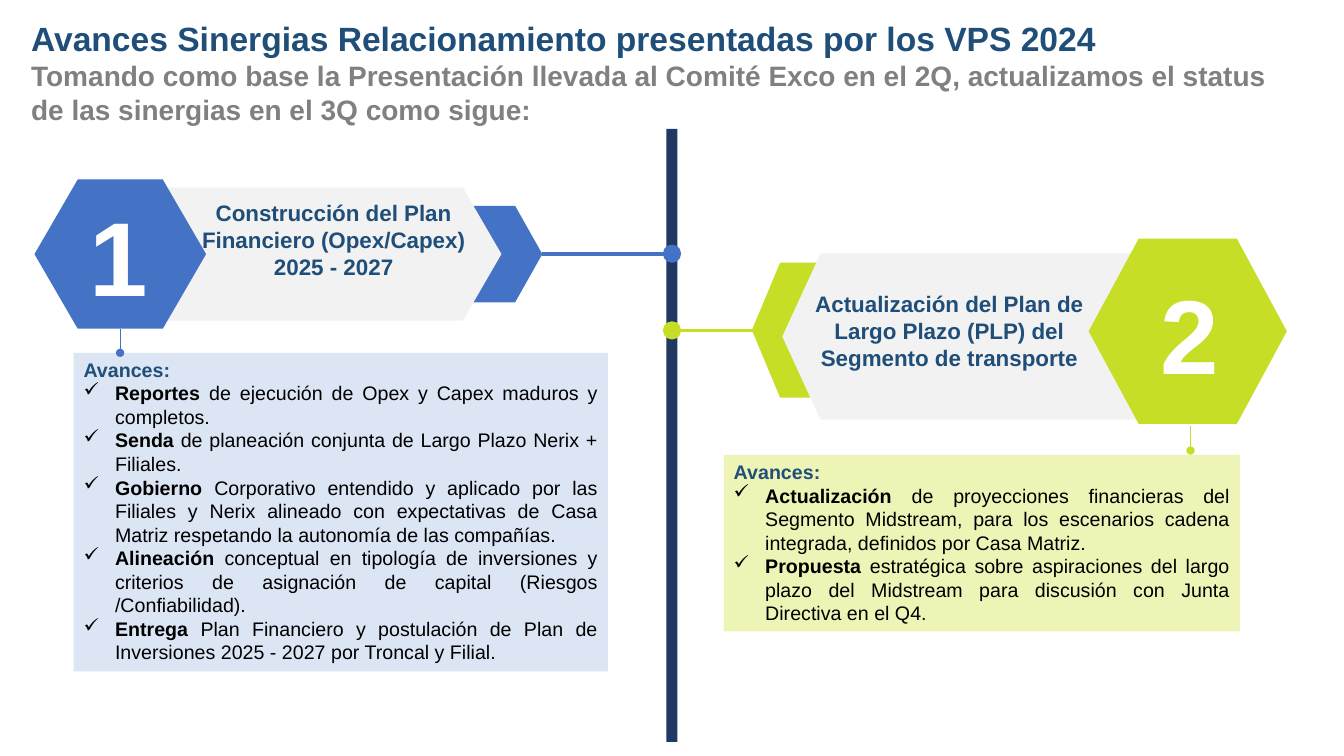
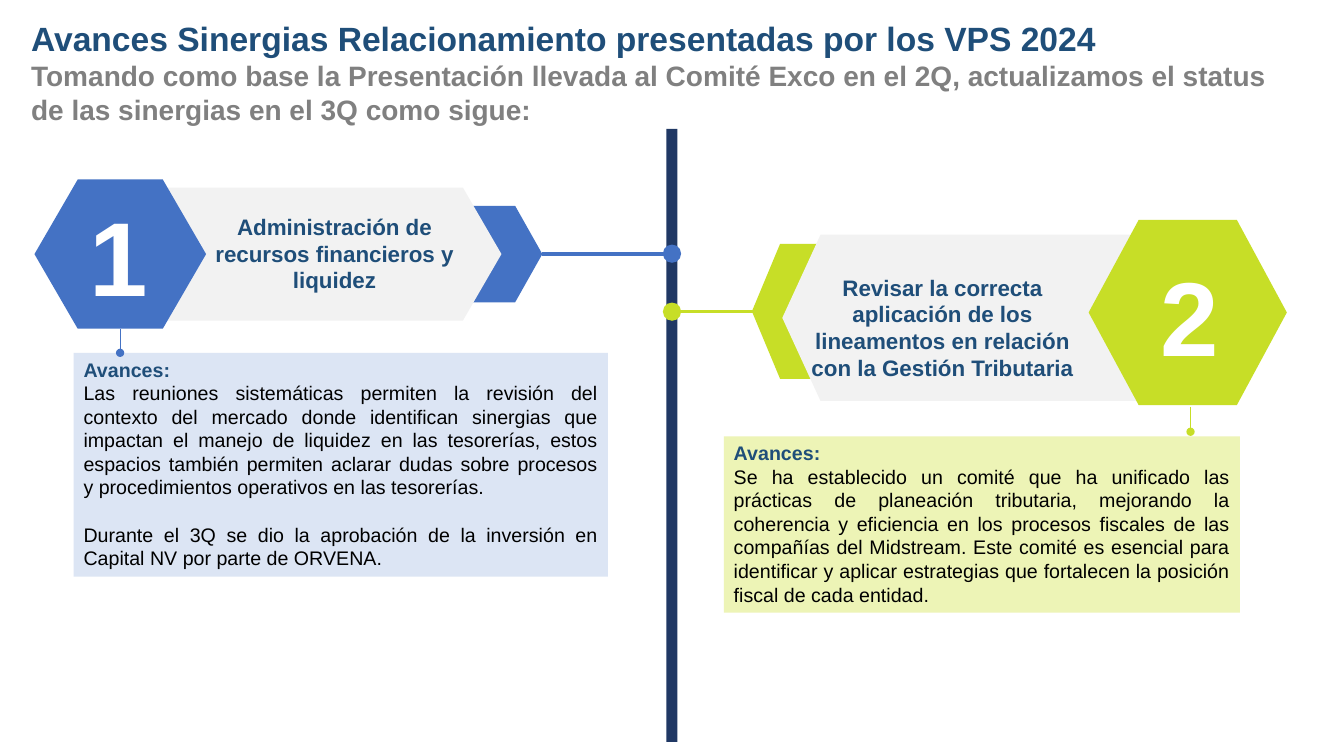
from lxml import etree
from pptx import Presentation
from pptx.dml.color import RGBColor
from pptx.enum import shapes, text
from pptx.oxml.ns import qn
from pptx.util import Pt

BLUE = RGBColor(0x44, 0x72, 0xC4)
LIME = RGBColor(0xC7, 0xDE, 0x27)
PALE_BLUE = RGBColor(0xDC, 0xE5, 0xF4)
PALE_LIME = RGBColor(0xED, 0xF4, 0xB6)
NAVY = RGBColor(0x20, 0x38, 0x64)
INK = RGBColor(0x1F, 0x4E, 0x79)
GREY = RGBColor(0x80, 0x80, 0x80)
LIGHT = RGBColor(0xF2, 0xF2, 0xF2)
WHITE = RGBColor(0xFF, 0xFF, 0xFF)
BLACK = RGBColor(0, 0, 0)

KIND = shapes.MSO_SHAPE
MID = 480
INDENT = 22.5
TITLE = "Avances Sinergias Relacionamiento presentadas por los VPS 2024"
LEAD = ("Tomando como base la Presentación llevada al Comité Exco en el 2Q, "
        "actualizamos el status de las sinergias en el 3Q como sigue:")

STYLES = {
    "title": dict(size=Pt(24), bold=True, color=INK),
    "lead": dict(size=Pt(20), bold=True, color=GREY),
    "number": dict(size=Pt(75), bold=True, color=WHITE),
    "head": dict(size=Pt(16), bold=True, color=INK),
    "label": dict(size=Pt(14), bold=True, color=INK),
    "strong": dict(size=Pt(14), bold=True, color=BLACK),
    "body": dict(size=Pt(14), bold=False, color=BLACK),
}

# Geometry of each side: boxes are left, top, width, height.
LEFT = dict(
    color=BLUE, pale=PALE_BLUE, number="1",
    tip=(320.4, 147, 67, 69), tip_cut=0.29,
    band=(85.7, 134, 272.5, 95), band_cut=0.29,
    hexa=(24.6, 128.2, 122.6, 106.6), hexa_cut=0.29,
    digit=(36.7, 132.5, 95.8, 97.9),
    axis=181.2, reach=387.4, weight=3,
    pin=(85.8, 234.8, 252), note=(52.6, 252, 381.6))
RIGHT = dict(
    color=LIME, pale=PALE_LIME, number="2",
    tip=(537.1, 187.6, 67, 96.4), tip_cut=0.3,
    band=(558.8, 181, 272.5, 118.8), band_cut=0.23,
    hexa=(777.6, 170.4, 141.6, 132.4), hexa_cut=0.27,
    digit=(802.1, 188.8, 95.8, 97.9),
    axis=236, reach=541.4, weight=2.4,
    pin=(850.4, 304, 321.8), note=(517, 325, 368.6))

# Each side: geometry, upward shift, heading box, heading, note height, note.
SLIDES = [
    [(LEFT, 0, (122.4, 138.2, 231.8, 65.5),
      "Construcción del Plan Financiero (Opex/Capex) 2025 - 2027", 227.6,
      [("Reportes ", "de ejecución de Opex y Capex maduros y completos."),
       ("Senda ", "de planeación conjunta de Largo Plazo Nerix + Filiales."),
       ("Gobierno ", "Corporativo entendido y aplicado por las Filiales y Nerix "
        "alineado con expectativas de Casa Matriz respetando la autonomía de "
        "las compañías."),
       ("Alineación ", "conceptual en tipología de inversiones y criterios de "
        "asignación de capital (Riesgos /Confiabilidad)."),
       ("Entrega ", "Plan Financiero y postulación de Plan de Inversiones "
        "2025 - 2027 por Troncal y Filial.")]),
     (RIGHT, 0, (573, 203, 210.2, 65.5),
      "Actualización del Plan de Largo Plazo (PLP) del Segmento de transporte",
      126,
      [("Actualización ", "de proyecciones financieras del Segmento Midstream, "
        "para los escenarios cadena integrada, definidos por Casa Matriz."),
       ("Propuesta ", "estratégica sobre aspiraciones del largo plazo del "
        "Midstream para discusión con Junta Directiva en el Q4.")])],
    [(LEFT, 0, (138.2, 147.6, 201.6, 65.5),
      "Administración de recursos financieros y liquidez", 160,
      ["Las reuniones sistemáticas permiten la revisión del contexto del "
       "mercado donde identifican sinergias que impactan el manejo de liquidez "
       "en las tesorerías, estos espacios también permiten aclarar dudas sobre "
       "procesos y procedimientos operativos en las tesorerías.",
       "Durante el 3Q se dio la aprobación de la inversión en Capital NV por "
       "parte de ORVENA."]),
     (RIGHT, 13.4, (572.4, 171.4, 201.6, 104.4),
      "Revisar la correcta aplicación de los lineamentos en relación con la "
      "Gestión Tributaria", 126,
      ["Se ha establecido un comité que ha unificado las prácticas de "
       "planeación tributaria, mejorando la coherencia y eficiencia en los "
       "procesos fiscales de las compañías del Midstream. Este comité es "
       "esencial para identificar y aplicar estrategias que fortalecen la "
       "posición fiscal de cada entidad."])],
]


class Deck:
    def __init__(self):
        self.prs = Presentation()
        self.prs.slide_width, self.prs.slide_height = Pt(960), Pt(540)
        self.slide = None

    def start(self):
        """Add a slide with the shared title."""
        self.slide = self.prs.slides.add_slide(self.prs.slide_layouts[6])
        frame = self.box((15.1, 9.4, 898.6, 85))
        self.say(frame.paragraphs[0], TITLE, "title")
        self.say(frame.add_paragraph(), LEAD, "lead")

    def shape(self, kind, box, fill, cut=None, turn=0):
        item = self.slide.shapes.add_shape(kind, *map(Pt, box))
        item.shadow.inherit = False
        item.fill.solid()
        item.fill.fore_color.rgb = fill
        item.line.fill.background()
        item.rotation = turn
        if cut is not None:
            item.adjustments[0] = cut
        return item

    def line(self, start, end, color, width, dot=False):
        link = self.slide.shapes.add_connector(
            shapes.MSO_CONNECTOR.STRAIGHT, *map(Pt, start + end))
        link.line.color.rgb = color
        link.line.width = Pt(width)
        props = link._element.spPr
        if dot:
            etree.SubElement(props.find(qn("a:ln")), qn("a:tailEnd"), type="oval")
        etree.SubElement(props, qn("a:effectLst"))

    def box(self, box, anchor=text.MSO_ANCHOR.TOP):
        frame = self.slide.shapes.add_textbox(*map(Pt, box)).text_frame
        frame.word_wrap = True
        frame.vertical_anchor = anchor
        return frame

    def say(self, para, words, style, align=text.PP_ALIGN.LEFT):
        """Add a styled run to a paragraph."""
        para.alignment = align
        run = para.add_run()
        run.text = words
        run.font.name = "Arial"
        for key, value in STYLES[style].items():
            if key == "color":
                run.font.color.rgb = value
            else:
                setattr(run.font, key, value)
        return run

    def bullet(self, para):
        props = para._p.get_or_add_pPr()
        props.set("marL", str(Pt(INDENT)))
        props.set("indent", str(-Pt(INDENT)))
        etree.SubElement(props, qn("a:buChar"), char="✓")

    def note(self, box, fill, items):
        """Draw the panel of progress; pairs become bulleted items."""
        frame = self.shape(KIND.RECTANGLE, box, fill).text_frame
        frame.word_wrap = True
        frame.vertical_anchor = text.MSO_ANCHOR.TOP
        side = text.PP_ALIGN.JUSTIFY
        self.say(frame.paragraphs[0], "Avances:", "label", side)
        for rank, item in enumerate(items):
            para = frame.add_paragraph()
            if isinstance(item, tuple):
                self.say(para, item[0], "strong", side)
                self.say(para, item[1], "body", side)
                self.bullet(para)
            else:
                self.say(para, item, "body", side)
                if rank:
                    para.space_before = Pt(16.8)

    def banner(self, geo, rise):
        """Draw the arrow, band and numbered hexagon of one side."""
        turn = 180 if geo is RIGHT else 0
        for name, kind, fill in (("tip", KIND.PENTAGON, geo["color"]),
                                 ("band", KIND.PENTAGON, LIGHT),
                                 ("hexa", KIND.HEXAGON, geo["color"])):
            self.shape(kind, lift(geo[name], rise), fill, geo[name + "_cut"], turn)
        frame = self.box(lift(geo["digit"], rise), text.MSO_ANCHOR.MIDDLE)
        run = self.say(frame.paragraphs[0], geo["number"], "number",
                       text.PP_ALIGN.CENTER)
        run.font._element.set("spc", "-140")

    def side(self, geo, rise, spot, head, tall, items):
        color, axis = geo["color"], geo["axis"] - rise
        self.banner(geo, rise)
        self.line((geo["reach"], axis), (MID, axis), color, geo["weight"])
        self.shape(KIND.OVAL, (MID - 6.5, axis - 6.5, 13, 13), color)
        self.note(lift(geo["note"], rise) + (tall,), geo["pale"], items)
        x, top, end = geo["pin"]
        self.line((x, top - rise), (x, end - rise), color, 0.5, dot=True)
        frame = self.box(spot, text.MSO_ANCHOR.BOTTOM)
        self.say(frame.paragraphs[0], head, "head", text.PP_ALIGN.CENTER)


def lift(box, rise):
    """Move a box up."""
    return (box[0], box[1] - rise) + box[2:]


def main():
    deck = Deck()
    for sides in SLIDES:
        deck.start()
        deck.shape(KIND.RECTANGLE, (MID - 4, 92, 8, 438), NAVY)
        for args in sides:
            deck.side(*args)
    deck.prs.save("out.pptx")


if __name__ == "__main__":
    main()
